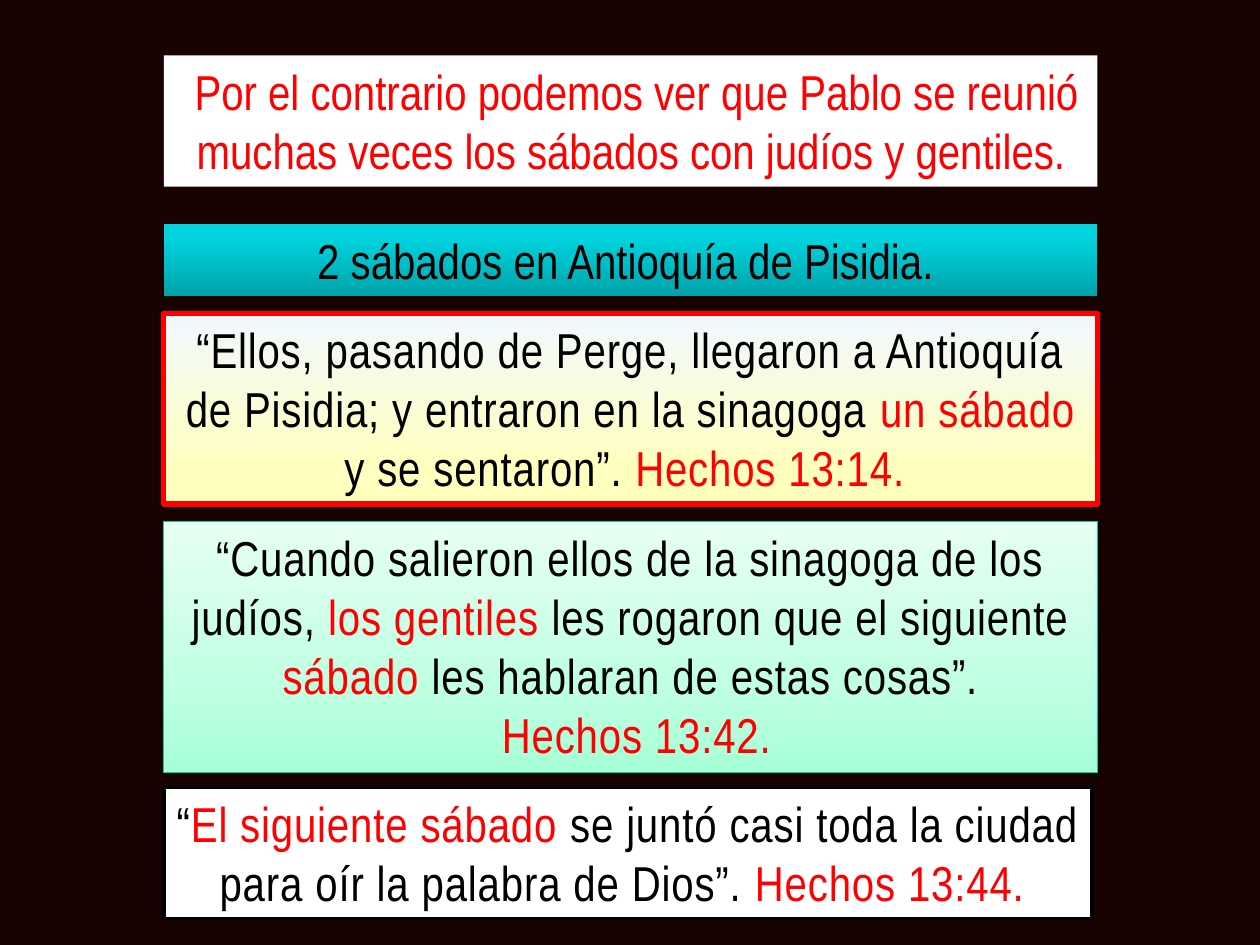
import pptx
import pptx.dml.color
import pptx.enum.shapes
import pptx.enum.text
import pptx.oxml
import pptx.oxml.ns
import pptx.util

Pt = pptx.util.Pt
RGB = pptx.dml.color.RGBColor
qn = pptx.oxml.ns.qn

BACKGROUND = RGB(0x19, 0x03, 0x01)
WHITE = RGB(0xFF, 0xFF, 0xFF)
BLACK = RGB(0, 0, 0)
RED = RGB(0xFF, 0, 0)
BLUE = RGB(0x4F, 0x81, 0xBD)
TEAL_EDGE = RGB(0x0B, 0xCF, 0x9A)
CREAM = [(0, RGB(0xF1, 0xF8, 0xFE)), (83, RGB(0xFF, 0xFF, 0xBD))]
TURQUOISE = [(0, RGB(0, 0xA3, 0xAA)), (80, RGB(0, 0xD3, 0xDD)), (100, RGB(0, 0xD4, 0xDE))]
MINT = [(0, RGB(0xA6, 0xFF, 0xD7)), (35, RGB(0xC0, 0xFF, 0xE2)), (100, RGB(0xE7, 0xFF, 0xF4))]

LEFT, WIDTH = 93.6, 533.5


def element(tag, content, attributes=""):
    return pptx.oxml.parse_xml(
        f'<a:{tag} {pptx.oxml.ns.nsdecls("a")} {attributes}>{content}</a:{tag}>')


def shadow_effect(color, alpha, blur, distance, angle):
    return element("effectLst", (
        f'<a:outerShdw blurRad="{Pt(blur)}" dist="{Pt(distance)}" dir="{angle * 60000}" '
        f'rotWithShape="0"><a:srgbClr val="{color}"><a:alpha val="{alpha * 1000}"/>'
        '</a:srgbClr></a:outerShdw>'))


def fill_gradient(panel, stops, angle):
    panel.fill.gradient()
    gradient = panel._element.spPr.find(qn("a:gradFill"))
    stop_xml = "".join(f'<a:gs pos="{position * 1000}"><a:srgbClr val="{color}"/></a:gs>'
                       for position, color in stops)
    gradient.getparent().replace(gradient, element(
        "gradFill", f'<a:gsLst>{stop_xml}</a:gsLst><a:lin ang="{angle * 60000}" scaled="0"/>',
        'rotWithShape="1"'))


def add_phrase(paragraph, text, color, spacing):
    phrase = paragraph.add_run()
    phrase.text = text
    for name, value in {"size": Pt(28), "name": "Arial Narrow"}.items():
        setattr(phrase.font, name, value)
    phrase.font.color.rgb = color
    properties = phrase.font._element
    if spacing:
        properties.set("spc", str(round(spacing * 100)))
    # Thin outline and soft shadow of the letters
    properties.insert(0, element(
        "ln", f'<a:solidFill><a:srgbClr val="{color}"/></a:solidFill>', f'w="{Pt(1.5)}"'))
    glow = BLUE if color == BLACK else color
    properties.find(qn("a:solidFill")).addnext(shadow_effect(glow, 60, 2, 2, 45))


def add_panel(slide, box, paragraphs, fill, angle=None, line=None, shadow=None, spacing=0):
    panel = slide.shapes.add_shape(
        pptx.enum.shapes.MSO_SHAPE.RECTANGLE, *(Pt(length) for length in box))
    panel.shadow.inherit = False
    if angle is None:
        panel.fill.solid()
        panel.fill.fore_color.rgb = fill
    else:
        fill_gradient(panel, fill, angle)
    if line:
        panel.line.color.rgb, panel.line.width = line[0], Pt(line[1])
    else:
        panel.line.fill.background()
    if shadow:
        effects = panel._element.spPr.find(qn("a:effectLst"))
        effects.getparent().replace(effects, shadow_effect(*shadow))

    frame = panel.text_frame
    frame_format = {
        "word_wrap": True,
        "auto_size": pptx.enum.text.MSO_AUTO_SIZE.SHAPE_TO_FIT_TEXT,
        "vertical_anchor": pptx.enum.text.MSO_ANCHOR.TOP,
    }
    for name, value in frame_format.items():
        setattr(frame, name, value)
    for index, phrases in enumerate(paragraphs):
        paragraph = frame.add_paragraph() if index else frame.paragraphs[0]
        paragraph.alignment = pptx.enum.text.PP_ALIGN.CENTER
        for text, color in phrases:
            add_phrase(paragraph, text, color, spacing)


def sabbath_slide(slide):
    slide.background.fill.solid()
    slide.background.fill.fore_color.rgb = BACKGROUND

    # Opening statement
    add_panel(slide, (LEFT, 31.7, WIDTH, 75), [[
        (" Por el contrario podemos ver que Pablo se reunió muchas veces "
         "los sábados con judíos y gentiles.", RED)]], WHITE)

    # First verse
    add_panel(slide, (LEFT, 179.3, WIDTH, 108.7), [[
        ("“Ellos, pasando de Perge, llegaron a Antioquía de Pisidia; "
         "y entraron en la sinagoga ", BLACK),
        ("un sábado ", RED), ("y se sentaron”. ", BLACK), ("Hechos 13:14. ", RED)]],
        CREAM, 90, line=(RED, 3), shadow=(BLACK, 38, 3.1, 1.6, 90), spacing=0.5)

    # Heading
    add_panel(slide, (LEFT, 128.1, WIDTH, 41), [[
        ("2 sábados en Antioquía de Pisidia. ", BLACK)]],
        TURQUOISE, 270, shadow=(BLACK, 35, 3.1, 1.8, 90))

    # Second verse
    add_panel(slide, (LEFT, 298, WIDTH, 143.3), [
        [("“Cuando salieron ellos de la sinagoga de los judíos, ", BLACK),
         ("los gentiles ", RED), ("les rogaron que el siguiente ", BLACK),
         ("sábado", RED), (" les hablaran de estas cosas”.", BLACK)],
        [(" Hechos 13:42.", RED)]],
        MINT, 270, line=(TEAL_EDGE, 0.75), shadow=(BLACK, 38, 3.1, 1.6, 90), spacing=0.5)

    # Third verse
    add_panel(slide, (LEFT, 450, 530.6, 75), [[
        ("“", BLACK), ("El siguiente sábado ", RED),
        ("se juntó casi toda la ciudad para oír la palabra de Dios”. ", BLACK),
        ("Hechos 13:44. ", RED)]], WHITE, line=(BLACK, 2), spacing=0.5)


def main():
    deck = pptx.Presentation()
    deck.slide_width, deck.slide_height = Pt(720), Pt(540)
    sabbath_slide(deck.slides.add_slide(deck.slide_layouts[6]))
    deck.save("out.pptx")


if __name__ == "__main__":
    main()
